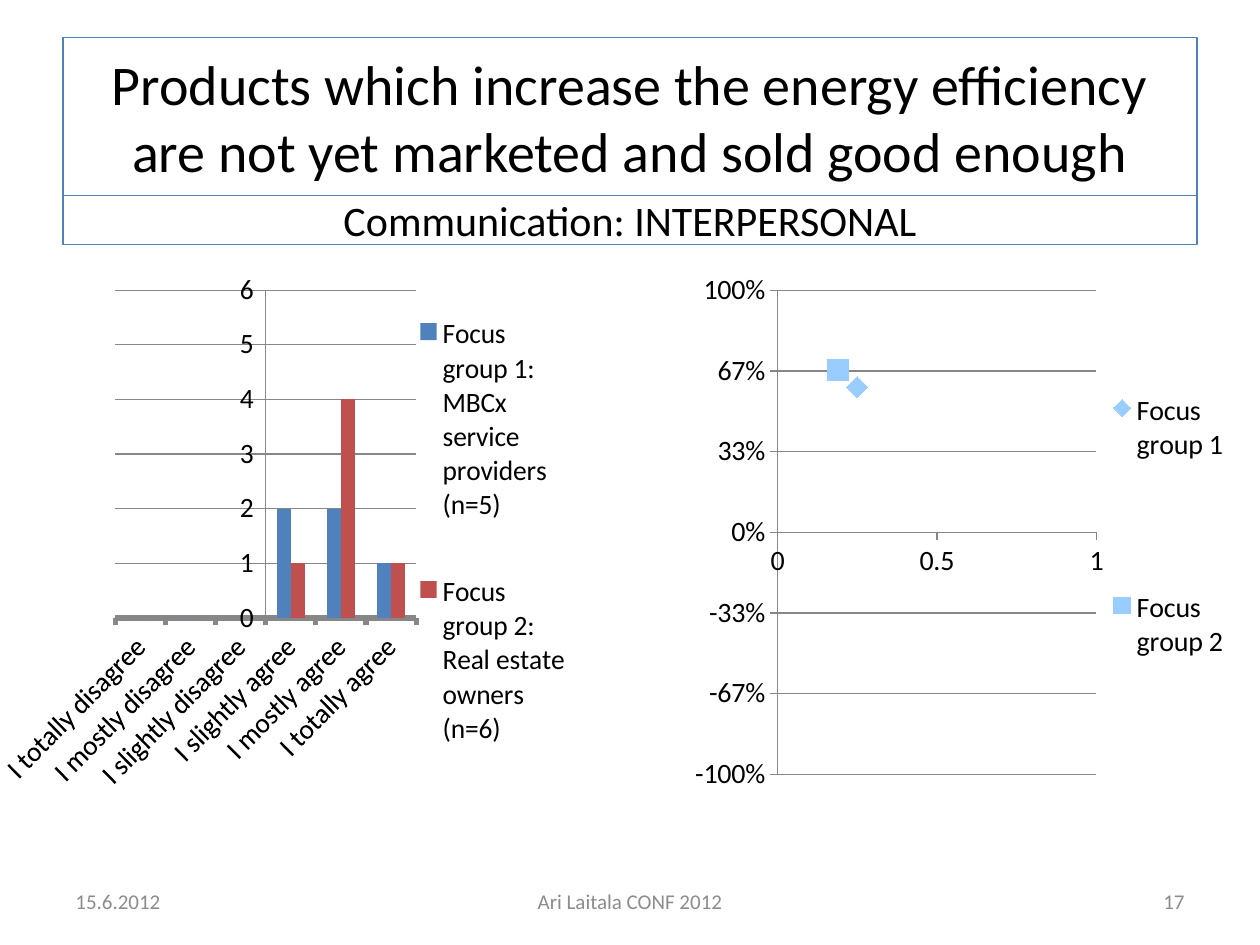
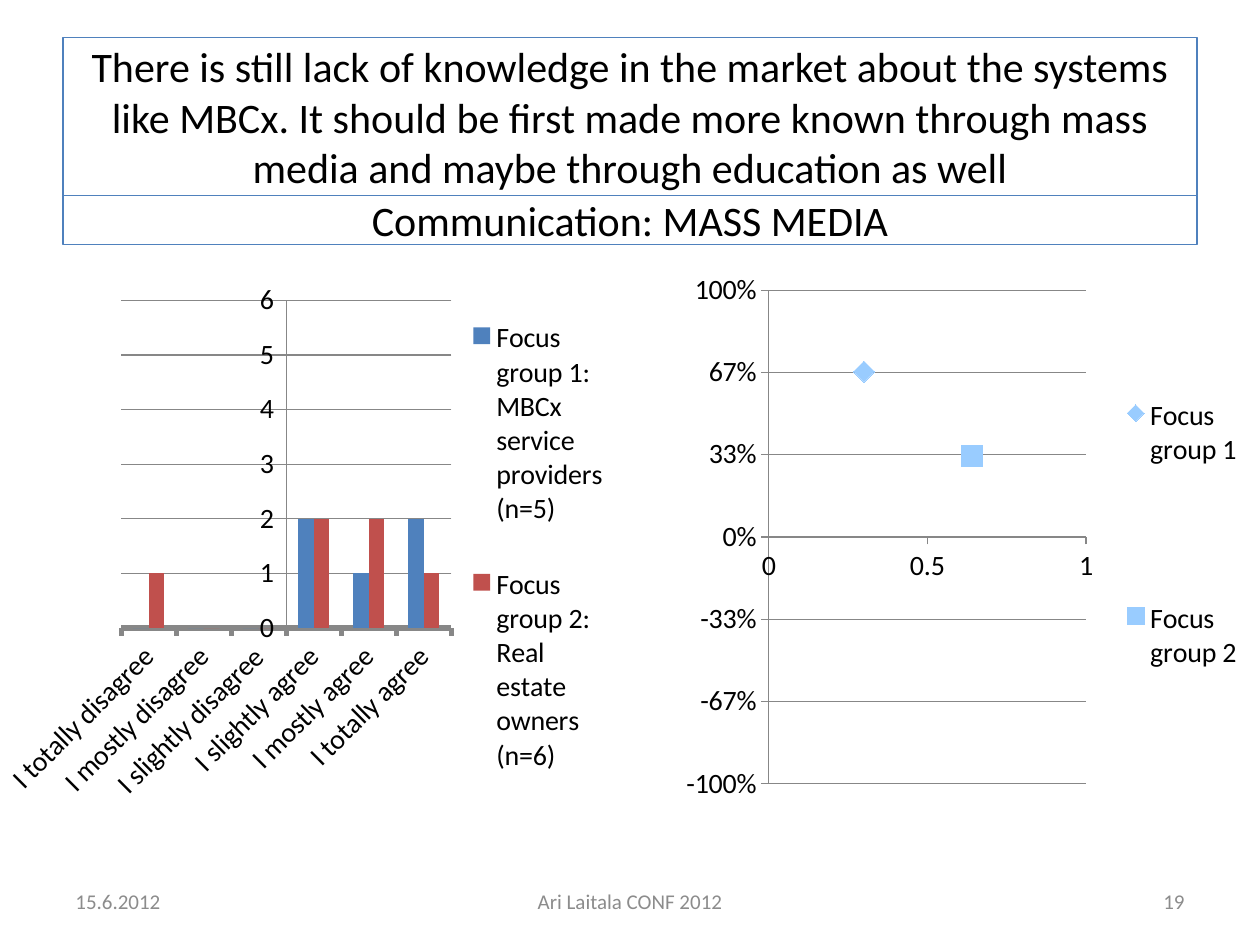
"""Build two survey slides, each with a column chart and a scatter chart."""
from dataclasses import dataclass
from typing import NamedTuple

from lxml import etree
from pptx import Presentation
from pptx.chart.chart import Chart
from pptx.chart.data import CategoryChartData, XyChartData
from pptx.dml.color import RGBColor
from pptx.enum.chart import XL_CHART_TYPE, XL_LEGEND_POSITION, XL_MARKER_STYLE, XL_TICK_MARK
from pptx.enum.shapes import MSO_SHAPE
from pptx.enum.text import MSO_ANCHOR, MSO_AUTO_SIZE, PP_ALIGN
from pptx.oxml.ns import qn
from pptx.util import Pt

COLUMN, SCATTER = XL_CHART_TYPE.COLUMN_CLUSTERED, XL_CHART_TYPE.XY_SCATTER
LEGEND_RIGHT = XL_LEGEND_POSITION.RIGHT
MARKERS = (XL_MARKER_STYLE.DIAMOND, XL_MARKER_STYLE.SQUARE)
TICK_OUT = XL_TICK_MARK.OUTSIDE
RECT = MSO_SHAPE.RECTANGLE
MIDDLE = MSO_ANCHOR.MIDDLE
NO_FIT = MSO_AUTO_SIZE.NONE
LEFT, CENTER, RIGHT = PP_ALIGN.LEFT, PP_ALIGN.CENTER, PP_ALIGN.RIGHT

FONT = "Calibri"
COLORS = {"text": "000000", "footer": "8C8C8C", "group 1": "4F81BD",
          "group 2": "C0504D", "border": "4F81BD", "marker": "99CCFF",
          "axis": "878787"}
ANSWERS = ("I totally disagree", "I mostly disagree", "I slightly disagree",
           "I slightly agree", "I mostly agree", "I totally agree")
GROUPS = ("Focus group 1", "Focus group 2")
GROUP_DETAILS = ("MBCx service providers (n=5)", "Real estate owners (n=6)")


class Box(NamedTuple):
    """Left, top, width and height, in points or in percent of a chart."""
    x: float
    y: float
    w: float
    h: float

    def points(self) -> list:
        """Return the four lengths as Pt values."""
        return [Pt(v) for v in self]


TITLE_BOX = Box(36, 21.6, 648, 90)
TOPIC_BOX = Box(36, 111.6, 648, 28.08)


@dataclass
class ChartFrame:
    """Place of a chart, and of its plot and legend in percent."""
    box: Box
    plot: Box
    legend: Box


@dataclass
class SurveySlide:
    """Wording and results for one survey statement."""
    title: str
    title_size: int
    topic: str
    number: str
    counts: tuple
    points: tuple
    column_frame: ChartFrame
    scatter_frame: ChartFrame


SLIDES = (
    SurveySlide(
        "Products which increase the energy efficiency are not yet marketed "
        "and sold good enough", 32, "INTERPERSONAL", "17",
        ((0, 0, 0, 2, 2, 1), (0, 0, 0, 1, 4, 1)),
        ((0.25, 0.6), (0.19, 0.67)),
        ChartFrame(Box(0, 151.2, 331.92, 311.76), Box(18.3, 4.7, 52.8, 60.1),
                   Box(71, 0, 27, 98)),
        ChartFrame(Box(382.32, 151.2, 336.96, 306), Box(18.4, 4.8, 54.1, 90.4),
                   Box(73.2, 0, 23, 98))),
    SurveySlide(
        "There is still lack of knowledge in the market about the systems "
        "like MBCx. It should be first made more known through mass media "
        "and maybe through education as well", 24, "MASS MEDIA", "19",
        ((0, 0, 0, 2, 1, 2), (1, 0, 0, 2, 2, 1)),
        ((0.3, 0.67), (0.64, 0.33)),
        ChartFrame(Box(0, 156.96, 351.36, 311.76), Box(19.7, 4.7, 53.7, 60.1),
                   Box(76, 1, 23, 98)),
        ChartFrame(Box(377.28, 151.2, 342.72, 311.76), Box(18.1, 4.7, 52.9, 90.5),
                   Box(76, 0, 22, 99))),
)


def rgb(name: str) -> RGBColor:
    """Return a named colour."""
    return RGBColor.from_string(COLORS[name])


def set_text(sp, text: str, size: int, color: str, align) -> None:
    """Fill a shape with one formatted paragraph."""
    tf = sp.text_frame
    tf.text = text
    tf.word_wrap = True
    tf.auto_size = NO_FIT
    tf.vertical_anchor = MIDDLE
    p = tf.paragraphs[0]
    p.alignment = align
    font = p.runs[0].font
    font.name, font.size, font.color.rgb = FONT, Pt(size), rgb(color)


def outline(sp) -> None:
    """Give a shape a thin border and no fill."""
    sp.fill.background()
    sp.line.color.rgb = rgb("border")
    sp.line.width = Pt(0.75)


def add_headings(s, slide: SurveySlide) -> None:
    """Add the bordered title and the topic bar below it."""
    title = s.shapes.title
    title.left, title.top, title.width, title.height = TITLE_BOX.points()
    topic = s.shapes.add_shape(RECT, *TOPIC_BOX.points())
    topic.shadow.inherit = False
    for sp, text, size in ((title, slide.title, slide.title_size),
                           (topic, f"Communication: {slide.topic}", 24)):
        outline(sp)
        set_text(sp, text, size, "text", CENTER)


def add_footers(s, number: str) -> None:
    """Add the date, the event and the slide number."""
    for text, x, w, align in (("15.6.2012", 36, 168, LEFT),
                              ("Ari Laitala CONF 2012", 246, 228, CENTER),
                              (number, 516, 168, RIGHT)):
        sp = s.shapes.add_textbox(*Box(x, 500.4, w, 28.8).points())
        set_text(sp, text, 12, "footer", align)


def make_layout(box: Box, inner: bool):
    """Return a manual chart layout element."""
    layout = etree.Element(qn("c:layout"))
    manual = etree.SubElement(layout, qn("c:manualLayout"))
    settings = [("layoutTarget", "inner")] if inner else []
    settings += [("xMode", "edge"), ("yMode", "edge")]
    settings += [(side, f"{percent / 100:.3f}") for side, percent in zip("xywh", box)]
    for tag, value in settings:
        etree.SubElement(manual, qn(f"c:{tag}"), val=value)
    return layout


def style_chart(chart: Chart, frame: ChartFrame) -> None:
    """Apply the shared fonts, axes, legend and layout."""
    chart.has_title = False
    chart.font.name, chart.font.size = FONT, Pt(16)
    chart.font.color.rgb = rgb("text")
    chart.has_legend = True
    chart.legend.position = LEGEND_RIGHT
    chart.legend.include_in_layout = False
    chart.plots[0].vary_by_categories = False
    for axis in (chart.category_axis, chart.value_axis):
        axis.major_tick_mark = TICK_OUT
        axis.has_major_gridlines = False
        axis.format.line.color.rgb = rgb("axis")
        axis.format.line.width = Pt(0.75)
    grid = chart.value_axis.major_gridlines.format.line
    grid.color.rgb, grid.width = rgb("axis"), Pt(0.75)
    plot_area = chart.plots[0]._element.getparent()
    legend = chart.legend._element
    for parent in (plot_area, legend):
        for old in parent.findall(qn("c:layout")):
            parent.remove(old)
    plot_area.insert(0, make_layout(frame.plot, True))
    legend.find(qn("c:legendPos")).addnext(make_layout(frame.legend, False))


def cross_at_category(axis, position: int) -> None:
    """Make a value axis cross the category axis at a numbered category."""
    element = axis._element
    for old in element.findall(qn("c:crosses")):
        element.remove(old)
    crossing = etree.Element(qn("c:crossesAt"), val=str(position))
    element.find(qn("c:crossAx")).addnext(crossing)


def add_column_chart(s, counts: tuple, frame: ChartFrame) -> None:
    """Add the chart of answers per focus group."""
    data = CategoryChartData()
    data.categories = ANSWERS
    for group, detail, values in zip(GROUPS, GROUP_DETAILS, counts):
        data.add_series(f"{group}: {detail}", values)
    chart = s.shapes.add_chart(COLUMN, *frame.box.points(), data).chart
    style_chart(chart, frame)
    chart.plots[0].gap_width = 150
    chart.plots[0].overlap = 0
    for series, color in zip(chart.plots[0].series, ("group 1", "group 2")):
        series.format.fill.solid()
        series.format.fill.fore_color.rgb = rgb(color)
    answers, scale = chart.category_axis, chart.value_axis
    cross_at_category(scale, 4)
    answers.format.line.width = Pt(3)
    answers.tick_labels.font.size = Pt(16)
    answers._element.find(qn("c:txPr")).find(qn("a:bodyPr")).set("rot", "-2700000")
    scale.minimum_scale, scale.maximum_scale, scale.major_unit = 0, 6, 1


def add_scatter_chart(s, points: tuple, frame: ChartFrame) -> None:
    """Add the chart with one marker per focus group."""
    data = XyChartData()
    for group, point in zip(GROUPS, points):
        data.add_series(group).add_data_point(*point)
    chart = s.shapes.add_chart(SCATTER, *frame.box.points(), data).chart
    style_chart(chart, frame)
    for series, style in zip(chart.plots[0].series, MARKERS):
        series.format.line.fill.background()
        marker = series.marker
        marker.style, marker.size = style, 12
        marker.format.fill.solid()
        marker.format.fill.fore_color.rgb = rgb("marker")
        marker.format.line.fill.background()
    for axis, low, unit, pattern in ((chart.category_axis, 0, 0.5, "General"),
                                     (chart.value_axis, -1, 1 / 3, "0%")):
        axis.minimum_scale, axis.maximum_scale, axis.major_unit = low, 1, unit
        axis.tick_labels.number_format = pattern
        axis.tick_labels.number_format_is_linked = False


def main() -> None:
    """Build and save the presentation."""
    prs = Presentation()
    prs.slide_width, prs.slide_height = Pt(720), Pt(540)
    for slide in SLIDES:
        s = prs.slides.add_slide(prs.slide_layouts[5])
        add_headings(s, slide)
        add_footers(s, slide.number)
        add_column_chart(s, slide.counts, slide.column_frame)
        add_scatter_chart(s, slide.points, slide.scatter_frame)
    prs.save("out.pptx")


if __name__ == "__main__":
    main()
